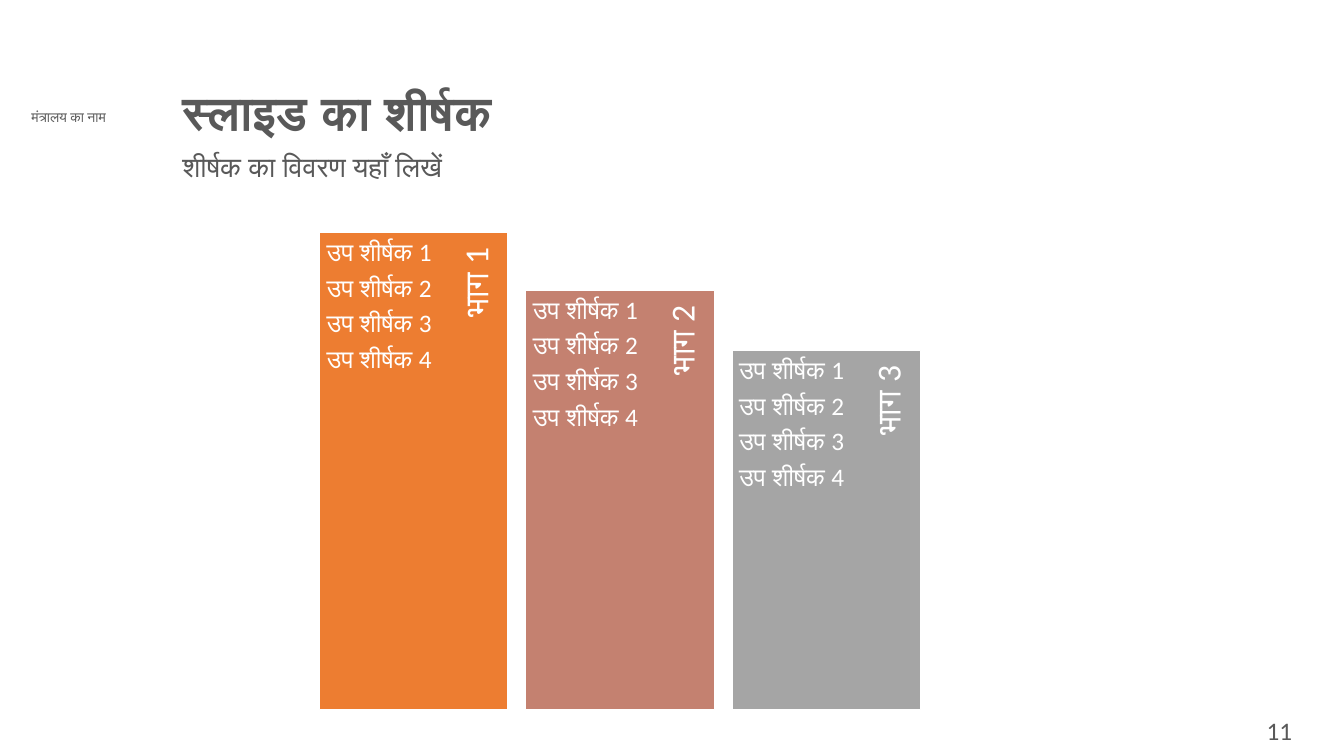
from pptx import Presentation
from pptx.dml.color import RGBColor
from pptx.enum.shapes import MSO_SHAPE
from pptx.enum.text import MSO_ANCHOR, PP_ALIGN
from pptx.util import Inches, Pt

RECTANGLE = MSO_SHAPE.RECTANGLE
TOP, MIDDLE = MSO_ANCHOR.TOP, MSO_ANCHOR.MIDDLE
LEFT, CENTER, RIGHT = PP_ALIGN.LEFT, PP_ALIGN.CENTER, PP_ALIGN.RIGHT

WHITE = RGBColor(0xFF, 0xFF, 0xFF)
DARK_GRAY = RGBColor(0x59, 0x59, 0x59)
ORANGE = RGBColor(0xED, 0x7D, 0x31)
ROSE = RGBColor(0xC4, 0x81, 0x70)
GRAY = RGBColor(0xA5, 0xA5, 0xA5)

deck = Presentation()
deck.slide_width = Inches(13.33)
deck.slide_height = Inches(7.5)
slide = deck.slides.add_slide(deck.slide_layouts[6])


def add_text(text, left, top, width, height, size, color=DARK_GRAY, font="Calibri",
             bold=False, align=LEFT, anchor=TOP, insets=(0.1, 0.05, 0.1, 0.05),
             line_spacing=0.9, space_after=0, rotation=0):
    box = slide.shapes.add_textbox(Inches(left), Inches(top), Inches(width), Inches(height))
    box.rotation = rotation
    frame = box.text_frame
    frame.word_wrap = True
    frame.vertical_anchor = anchor
    frame.margin_left, frame.margin_top, frame.margin_right, frame.margin_bottom = map(Inches, insets)
    frame.text = text
    for paragraph in frame.paragraphs:
        paragraph.alignment = align
        paragraph.line_spacing = line_spacing
        paragraph.space_after = Pt(space_after)
        paragraph.font.size = Pt(size)
        paragraph.font.name = font
        paragraph.font.bold = bold
        paragraph.font.color.rgb = color


add_text("मंत्रालय का नाम", 0.03, 1.03, 1.3, 0.27, 10, font="Lato", align=CENTER, line_spacing=1)
add_text("स्लाइड का शीर्षक", 1.71, 0.84, 9.61, 0.55, 34, bold=True)
add_text("शीर्षक का विवरण यहाँ लिखें", 1.71, 1.47, 9.61, 0.63, 20)

BAR_WIDTH = 1.87
BAR_BOTTOM = 7.04
LABEL_HEIGHT = 0.49
LABEL_CENTER = 1.58
subheadings = "\n".join(f"उप शीर्षक {number}" for number in range(1, 5))

for part, (bar_top, bar_color) in enumerate([(2.31, ORANGE), (2.88, ROSE), (3.48, GRAY)]):
    bar_left = 3.17 + part * 2.045
    bar_height = BAR_BOTTOM - bar_top
    bar = slide.shapes.add_shape(
        RECTANGLE, Inches(bar_left), Inches(bar_top), Inches(BAR_WIDTH), Inches(bar_height))
    bar.shadow.inherit = False
    bar.fill.solid()
    bar.fill.fore_color.rgb = bar_color
    bar.line.color.rgb = WHITE
    bar.line.width = Pt(1)

    label_length = bar_height * 0.9
    add_text(f"भाग {part + 1}", bar_left + LABEL_CENTER - label_length / 2,
             bar_top + (label_length - LABEL_HEIGHT) / 2, label_length, LABEL_HEIGHT, 24,
             color=WHITE, align=RIGHT, anchor=MIDDLE, insets=(0.1, 0, 0.15, 0.03), rotation=270)
    add_text(subheadings, bar_left, bar_top, 1.33, bar_height, 18, color=WHITE,
             insets=(0.07, 0.07, 0.07, 0.07), space_after=6)

add_text("11", 12.1, 7.02, 1.18, 0.45, 18, align=CENTER, anchor=MIDDLE, line_spacing=1)

deck.save("out.pptx")
